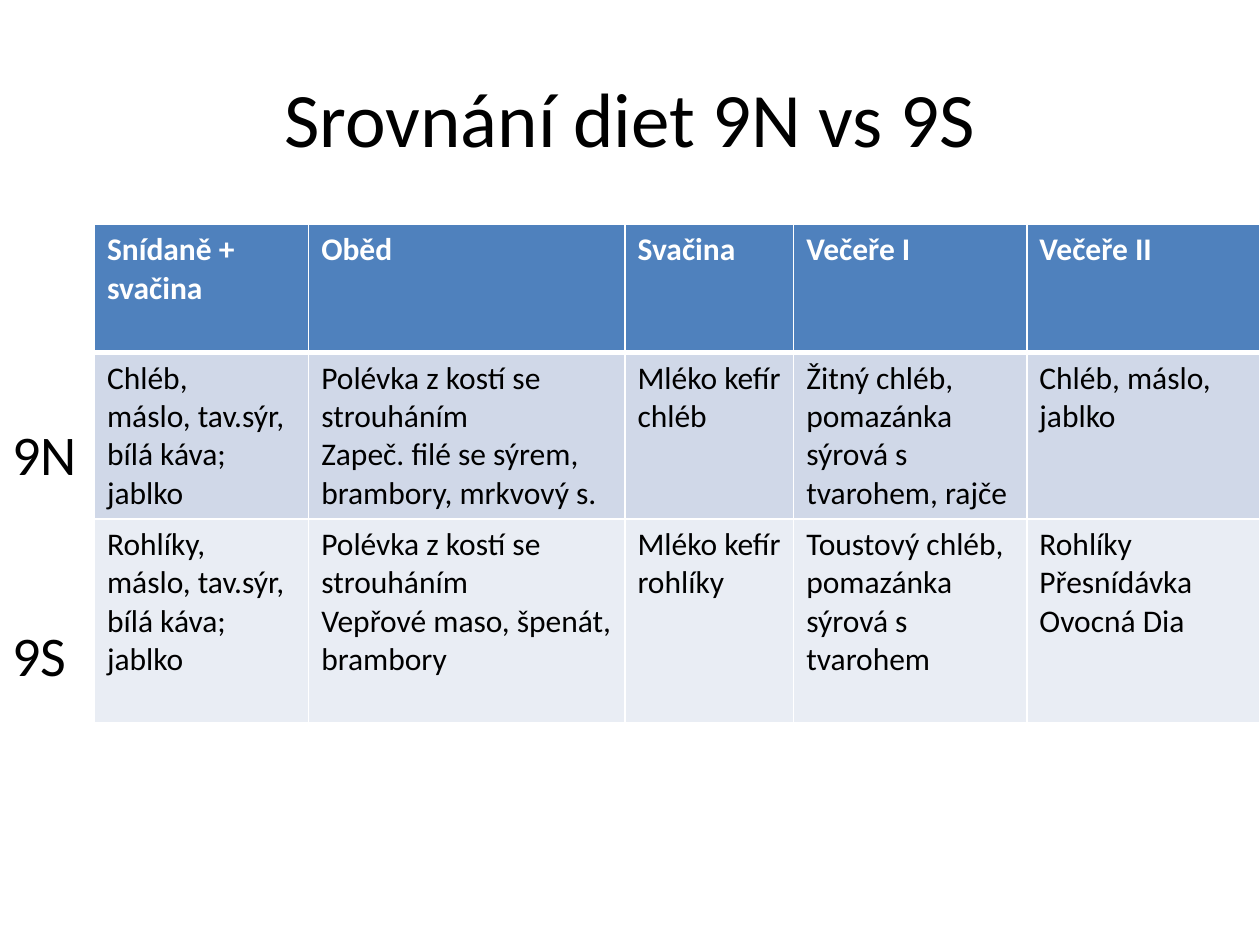
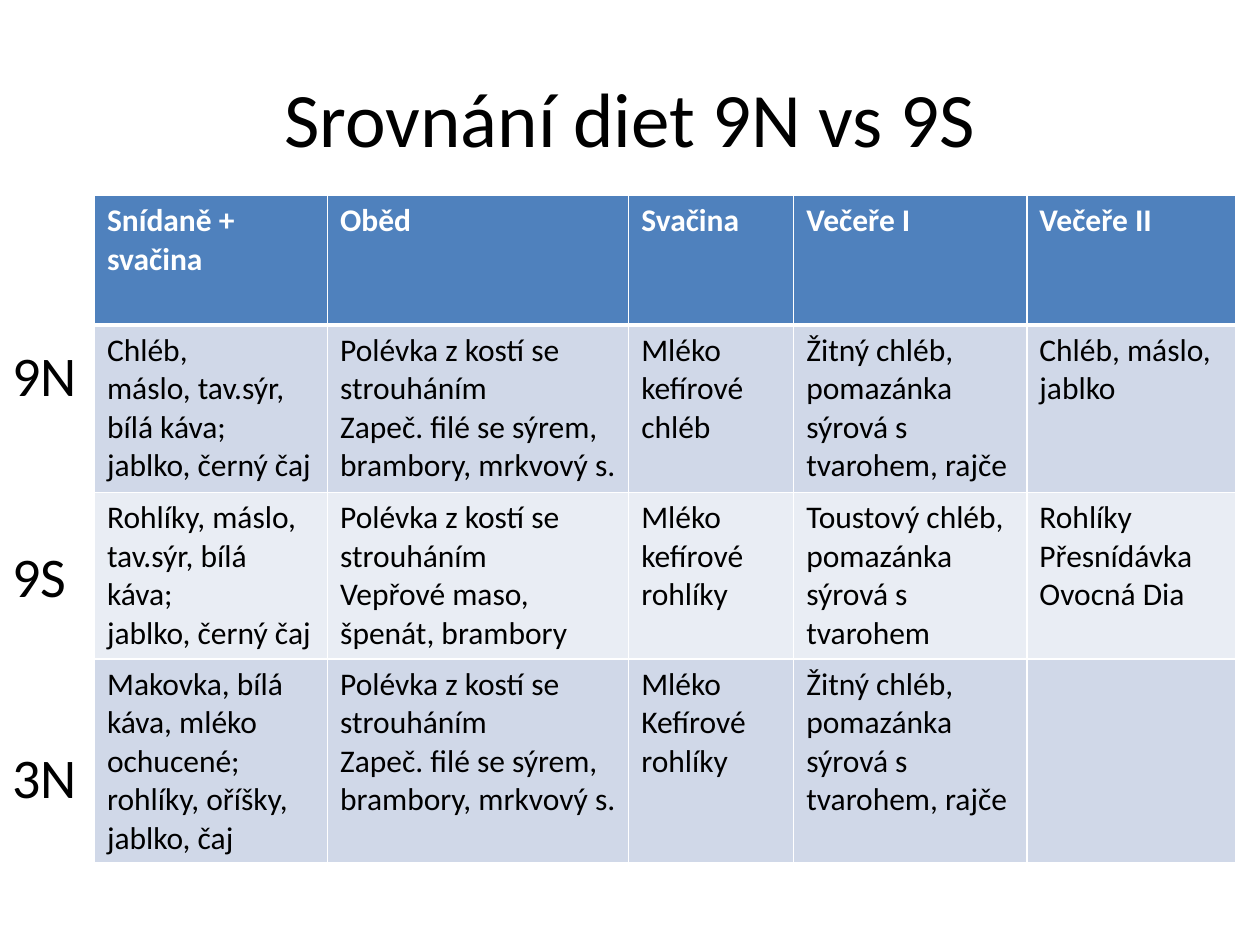
import pptx
import pptx.dml.color
import pptx.enum.text
import pptx.oxml
import pptx.oxml.ns
import pptx.util
from dataclasses import dataclass

HEADER = ["Snídaně + svačina", "Oběd", "Svačina", "Večeře I", "Večeře II"]
SOUP = "Polévka z kostí se strouháním\n"
FISH_LUNCH = SOUP + "Zapeč. filé se sýrem, brambory, mrkvový s."
MEAT_LUNCH = SOUP + "Vepřové maso, špenát, brambory"
RYE_DINNER = "Žitný chléb, pomazánka sýrová s tvarohem, rajče"
TOAST_DINNER = "Toustový chléb, pomazánka sýrová s tvarohem"
BREAD_SUPPER = "Chléb, máslo, jablko"
ROLL_SUPPER = "Rohlíky\nPřesnídávka\nOvocná Dia"
TITLE = "Srovnání diet 9N vs 9S"

SLIDES = [
    dict(
        table_top=1.78, label_top=3.28,
        cols=[1.7, 2.51, 1.34, 1.85, 1.85],
        rows=[1.02, 1.32, 1.62],
        diets={
            "9N": ["Chléb,\nmáslo, tav.sýr,\nbílá káva; jablko", FISH_LUNCH,
                   "Mléko kefír\nchléb", RYE_DINNER, BREAD_SUPPER],
            "9S": ["Rohlíky, máslo, tav.sýr, bílá káva; jablko", MEAT_LUNCH,
                   "Mléko kefír rohlíky", TOAST_DINNER, ROLL_SUPPER],
        },
    ),
    dict(
        table_top=1.55, label_top=2.65,
        cols=[1.85, 2.39, 1.31, 1.85, 1.66],
        rows=[1.03, 1.33, 1.32, 1.62],
        diets={
            "9N": ["Chléb,\nmáslo, tav.sýr,\nbílá káva; jablko, černý čaj", FISH_LUNCH,
                   "Mléko kefírové\nchléb", RYE_DINNER, BREAD_SUPPER],
            "9S": ["Rohlíky, máslo, tav.sýr, bílá káva;\njablko, černý čaj", MEAT_LUNCH,
                   "Mléko kefírové rohlíky", TOAST_DINNER, ROLL_SUPPER],
            "3N": ["Makovka, bílá káva, mléko ochucené; rohlíky, oříšky, jablko, čaj",
                   FISH_LUNCH, "Mléko\nKefírové\nrohlíky", RYE_DINNER, ""],
        },
    ),
]


@dataclass(frozen=True)
class Theme:
    font: str = "Calibri"
    title_size: int = 44
    label_size: int = 32
    cell_size: int = 18
    text: str = "000000"
    white: str = "FFFFFF"
    header: str = "4F81BD"
    bands: tuple = ("D0D8E8", "E9EDF4")
    thin: int = 1
    thick: int = 3


THEME = Theme()
WIDTH, HEIGHT = 10, 7.5
MARGIN = 0.05 * WIDTH
LABEL_WIDTH = 0.75
LABEL_GAP = 76.5  # points, two blank lines of label text
LABEL_PITCH = 1.61


def rgb(value):
    return pptx.dml.color.RGBColor.from_string(value)


def write(tf, text, size, color=THEME.text, bold=False, align=None, gap=0):
    """Fill a text frame, one paragraph per line, with gap points between them."""
    tf.word_wrap = True
    tf.text = text
    for i, p in enumerate(tf.paragraphs):
        p.alignment = align
        if i and gap:
            p.space_before = pptx.util.Pt(gap)
        items = p.runs or [p]
        for item in items:
            item.font.name = THEME.font
            item.font.size = pptx.util.Pt(size)
            item.font.bold = bold
            item.font.color.rgb = rgb(color)


def add_box(s, left, top, width, height):
    return s.shapes.add_textbox(*map(pptx.util.Inches, (left, top, width, height))).text_frame


def set_borders(cell, top, bottom):
    tc_pr = cell._tc.get_or_add_tcPr()
    sides = dict(L=THEME.thin, R=THEME.thin, T=top, B=bottom)
    for side, points in sides.items():
        tc_pr.append(pptx.oxml.parse_xml(
            f'<a:ln{side} {pptx.oxml.ns.nsdecls("a")} w="{pptx.util.Pt(points)}">'
            f'<a:solidFill><a:srgbClr val="{THEME.white}"/></a:solidFill></a:ln{side}>'))


def add_title(s):
    tf = add_box(s, MARGIN, 0.3, WIDTH - 2 * MARGIN, HEIGHT / 6)
    tf.vertical_anchor = pptx.enum.text.MSO_ANCHOR.MIDDLE
    write(tf, TITLE, THEME.title_size, align=pptx.enum.text.PP_ALIGN.CENTER)


def add_menu(s, top, cols, rows, diets):
    frame = s.shapes.add_table(len(rows), len(cols), *map(
        pptx.util.Inches, (LABEL_WIDTH, top, sum(cols), sum(rows))))
    table = frame.table
    for column, width in zip(table.columns, cols):
        column.width = pptx.util.Inches(width)
    for row, height in zip(table.rows, rows):
        row.height = pptx.util.Inches(height)
    for r, meals in enumerate([HEADER, *diets.values()]):
        is_header = r == 0
        fill = THEME.header if is_header else THEME.bands[(r - 1) % 2]
        for c, meal in enumerate(meals):
            cell = table.cell(r, c)
            set_borders(cell, THEME.thick if r == 1 else THEME.thin,
                        THEME.thick if is_header else THEME.thin)
            cell.fill.solid()
            cell.fill.fore_color.rgb = rgb(fill)
            write(cell.text_frame, meal, THEME.cell_size, bold=is_header,
                  color=THEME.white if is_header else THEME.text)


def add_diet_labels(s, top, diets):
    height = 0.65 + LABEL_PITCH * (len(diets) - 1)
    tf = add_box(s, 0, top, LABEL_WIDTH, height)
    tf.auto_size = pptx.enum.text.MSO_AUTO_SIZE.SHAPE_TO_FIT_TEXT
    write(tf, "\n".join(diets), THEME.label_size, gap=LABEL_GAP)


def main():
    prs = pptx.Presentation()
    prs.slide_width = pptx.util.Inches(WIDTH)
    prs.slide_height = pptx.util.Inches(HEIGHT)
    for page in SLIDES:
        s = prs.slides.add_slide(prs.slide_layouts[6])
        add_title(s)
        add_menu(s, page["table_top"], page["cols"], page["rows"], page["diets"])
        add_diet_labels(s, page["label_top"], page["diets"])
    prs.save("out.pptx")


if __name__ == "__main__":
    main()
